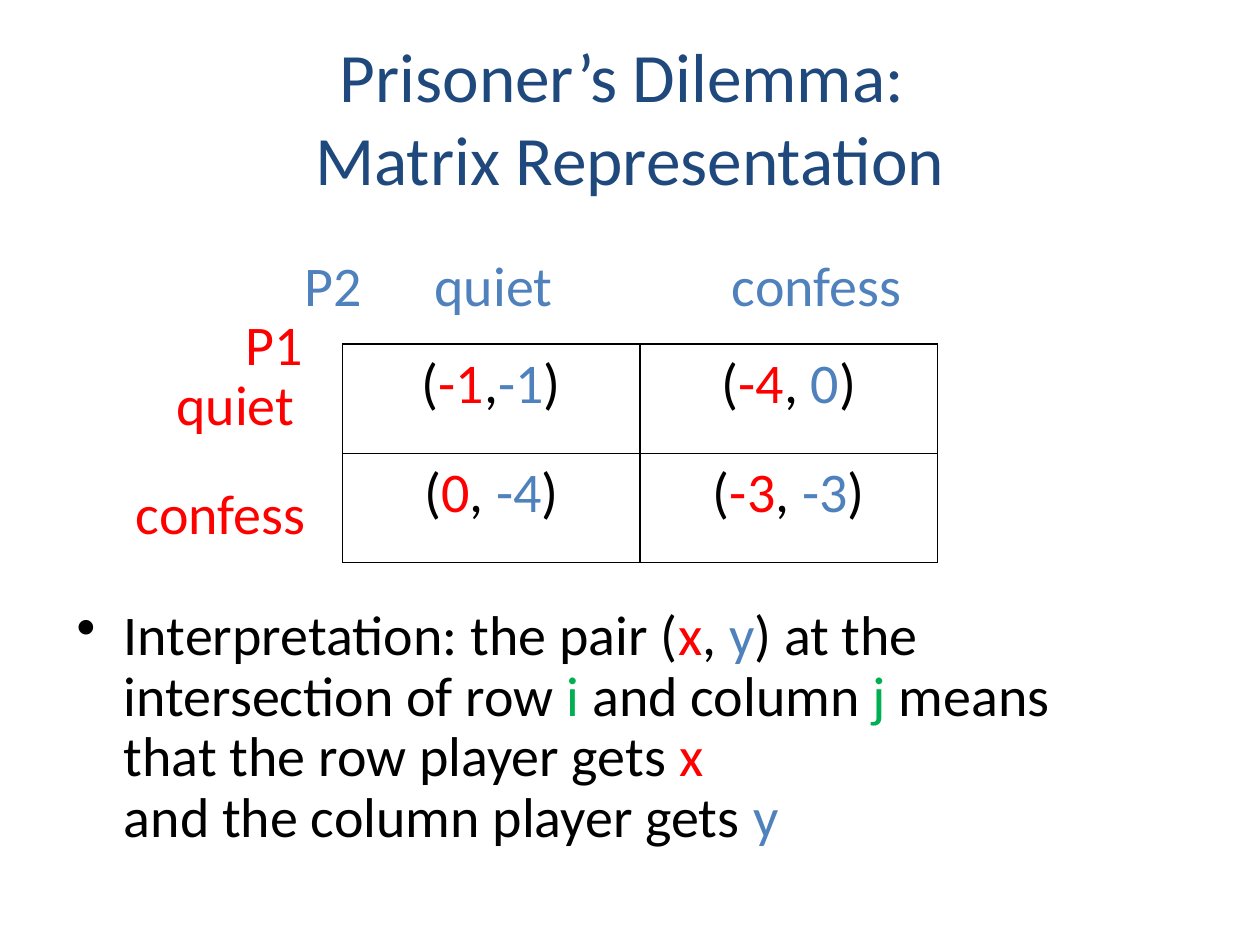
from dataclasses import dataclass

from lxml.etree import SubElement
from pptx import Presentation
from pptx.dml.color import RGBColor
from pptx.enum.text import MSO_ANCHOR, MSO_AUTO_SIZE, PP_ALIGN
from pptx.oxml import parse_xml
from pptx.oxml.ns import nsdecls, qn
from pptx.util import Pt


@dataclass(frozen=True)
class Theme:
    font: str = "Calibri"
    head: float = 39.6
    body: float = 32
    navy: str = "1F497D"
    ink: str = "000000"
    row: str = "FF0000"
    col: str = "4F81BD"
    index: str = "00B050"


T = Theme()

TITLE = [("Prisoner’s Dilemma: \nMatrix Representation", T.navy)]
PAYOFFS = [
    [("-1", ",", "-1"), ("-4", ", ", "0")],
    [("0", ", ", "-4"), ("-3", ", ", "-3")],
]
# text, colour, left, top, width
LABELS = [
    ("P2", T.col, 167, 139.7, 47.5),
    ("quiet", T.col, 241.2, 139.7, 82.8),
    ("confess", T.col, 411.1, 139.7, 112.3),
    ("P1", T.row, 133.2, 173.5, 47.5),
    ("quiet", T.row, 93.6, 207.4, 82.8),
    ("confess", T.row, 70.6, 270, 112.3),
]
MEANING = [
    ("Interpretation: the pair (", T.ink), ("x", T.row), (", ", T.ink),
    ("y", T.col), (") at the intersection of row ", T.ink), ("i", T.index),
    (" and column ", T.ink), ("j", T.index),
    (" means \nthat the row player gets ", T.ink), ("x \n", T.row),
    ("and the column player gets ", T.ink), ("y", T.col),
]
GRID = (195.8, 196.6)
CELL = (170, 62.4)


def write(para, parts, size=T.body, align=PP_ALIGN.LEFT):
    """Fill a paragraph with (text, colour) parts; a newline is a line break."""
    para.alignment = align
    para.font.name, para.font.size = T.font, Pt(size)
    for text, color in parts:
        for i, line in enumerate(text.split("\n")):
            if i:
                para.add_line_break()
            if line:
                run = para.add_run()
                run.text = line
                run.font.color.rgb = RGBColor.from_string(color)


def add_box(slide, *place, wrap=True):
    frame = slide.shapes.add_textbox(*map(Pt, place)).text_frame
    frame.word_wrap = wrap
    frame.auto_size = MSO_AUTO_SIZE.NONE if wrap else MSO_AUTO_SIZE.SHAPE_TO_FIT_TEXT
    return frame


def outline(cell):
    cell.fill.background()
    props = cell._tc.get_or_add_tcPr()
    for i, side in enumerate("LRTB"):
        props.insert(i, parse_xml(
            f'<a:ln{side} {nsdecls("a")} w="{Pt(1)}"><a:solidFill>'
            f'<a:srgbClr val="{T.ink}"/></a:solidFill></a:ln{side}>'))


def add_matrix(slide):
    rows, cols = len(PAYOFFS), len(PAYOFFS[0])
    place = (*GRID, cols * CELL[0], rows * CELL[1])
    table = slide.shapes.add_table(rows, cols, *map(Pt, place)).table
    table.first_row = table.horz_banding = False
    for r, pairs in enumerate(PAYOFFS):
        for c, (own, gap, other) in enumerate(pairs):
            cell = table.cell(r, c)
            outline(cell)
            parts = [("(", T.ink), (own, T.row), (gap, T.ink),
                     (other, T.col), (")", T.ink)]
            write(cell.text_frame.paragraphs[0], parts, align=PP_ALIGN.CENTER)


def add_meaning(slide):
    para = add_box(slide, 36.7, 343.4, 648, 149.8).paragraphs[0]
    write(para, MEANING)
    para.line_spacing, para.space_before = 0.9, Pt(6.4)
    props = para._p.get_or_add_pPr()
    props.set("marL", str(Pt(27)))
    props.set("indent", str(-Pt(27)))
    bullet = SubElement(props, qn("a:buChar"), char="•")
    props.find(qn("a:defRPr")).addprevious(bullet)


def main():
    deck = Presentation()
    deck.slide_width, deck.slide_height = Pt(720), Pt(540)
    slide = deck.slides.add_slide(deck.slide_layouts[6])
    title = add_box(slide, 36, 21.6, 648, 90)
    title.vertical_anchor = MSO_ANCHOR.MIDDLE
    write(title.paragraphs[0], TITLE, T.head, PP_ALIGN.CENTER)
    add_matrix(slide)
    for text, color, left, top, width in LABELS:
        frame = add_box(slide, left, top, width, 46, wrap=False)
        write(frame.paragraphs[0], [(text, color)])
    add_meaning(slide)
    deck.save("out.pptx")


if __name__ == "__main__":
    main()
